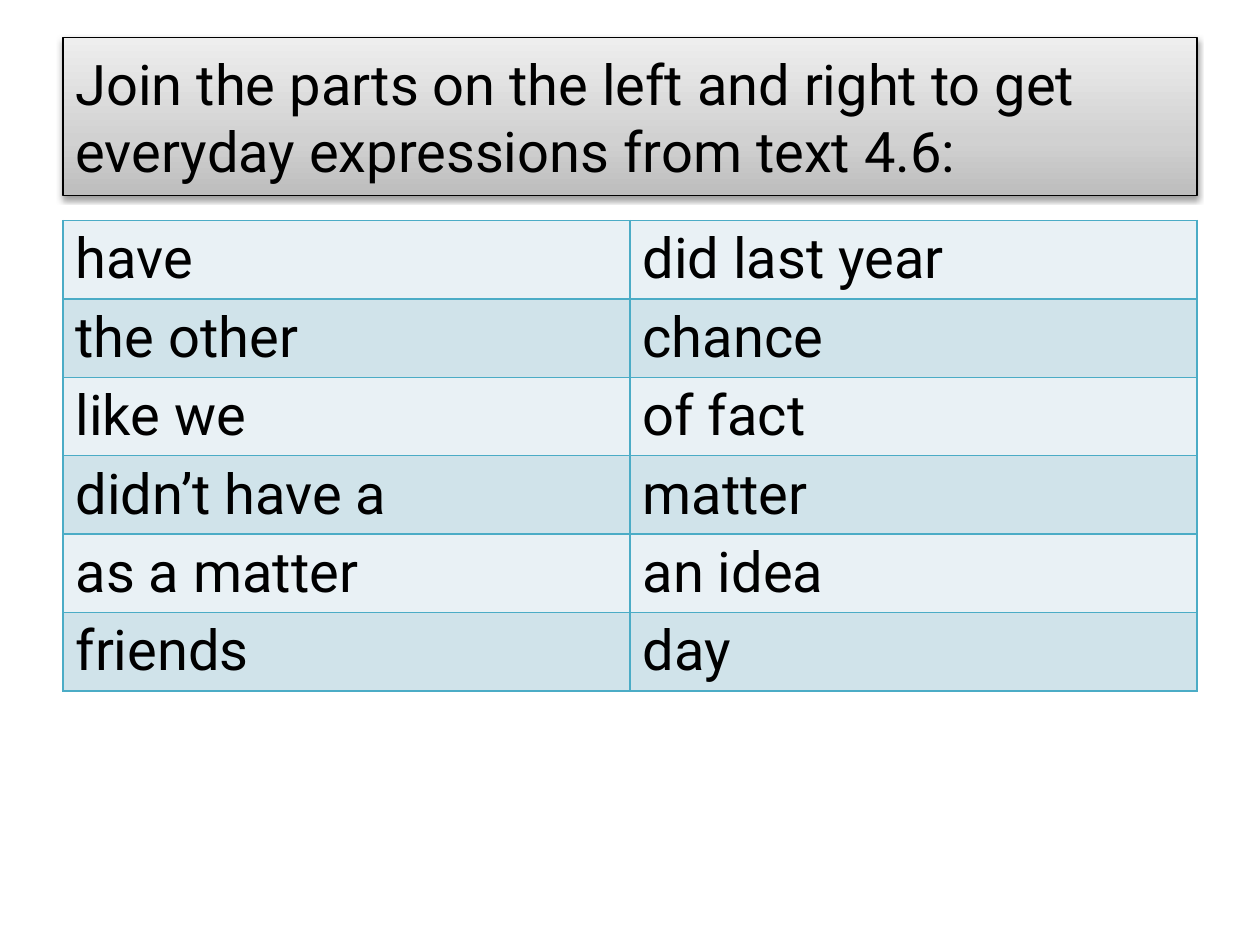
import copy

import pptx
import pptx.dml.color
import pptx.enum.text
import pptx.oxml
import pptx.oxml.ns
import pptx.util
from pptx.dml.color import RGBColor
from pptx.util import Inches, Pt

BLACK = RGBColor(0x00, 0x00, 0x00)
TITLE_STOPS = [
    (0, RGBColor(0xBD, 0xBD, 0xBD)),
    (0.35, RGBColor(0xD1, 0xD1, 0xD1)),
    (1, RGBColor(0xEE, 0xEE, 0xEE)),
]
BORDER = RGBColor(0x4B, 0xAC, 0xC6)
BANDS = [RGBColor(0xE9, 0xF1, 0xF5), RGBColor(0xD0, 0xE3, 0xEA)]

LEFT, WIDTH = 0.5, 9
ROW_HEIGHT = 0.62
EXPRESSIONS = [
    ("have", "did last year"),
    ("the other", "chance"),
    ("like we", "of fact"),
    ("didn’t have a", "matter"),
    ("as a matter", "an idea"),
    ("friends", "day"),
]


def write_text(text_frame, text, font="Roboto", size=32, color=BLACK,
               align=pptx.enum.text.PP_ALIGN.LEFT):
    paragraph = text_frame.paragraphs[0]
    paragraph.alignment = align
    run = paragraph.add_run()
    run.text = text
    run.font.name = font
    run.font.size = Pt(size)
    run.font.color.rgb = color


def drawing_xml(xml):
    """Parse one element whose tag has no attributes, in the a: namespace."""
    return pptx.oxml.parse_xml(xml.replace(">", f" {pptx.oxml.ns.nsdecls('a')}>", 1))


def add_shadow(shape):
    shape._element.spPr.append(drawing_xml(
        f'<a:effectLst><a:outerShdw blurRad="{Pt(3.1)}" dist="{Pt(1.6)}" '
        'dir="5400000" rotWithShape="0"><a:srgbClr val="000000">'
        '<a:alpha val="38000"/></a:srgbClr></a:outerShdw></a:effectLst>'))


def set_borders(cell, color, width):
    properties = cell._tc.get_or_add_tcPr()
    for index, side in enumerate(("lnL", "lnR", "lnT", "lnB")):
        line = drawing_xml(
            f'<a:{side}><a:solidFill><a:srgbClr val="{color}"/></a:solidFill></a:{side}>')
        line.set("w", str(Pt(width)))
        properties.insert(index, line)


class ExerciseSlide:
    def __init__(self, presentation):
        self.slide = presentation.slides.add_slide(presentation.slide_layouts[5])

    def title(self, text, top, height):
        title = self.slide.shapes.title
        title.left, title.top = Inches(LEFT), Inches(top)
        title.width, title.height = Inches(WIDTH), Inches(height)
        title.fill.gradient()
        title.fill.gradient_angle = 90
        stop_list = title._element.spPr.find(".//" + pptx.oxml.ns.qn("a:gsLst"))
        stop_list.insert(1, copy.deepcopy(stop_list[0]))
        for stop, (position, color) in zip(title.fill.gradient_stops, TITLE_STOPS):
            stop.position = position
            stop.color.rgb = color
        title.line.color.rgb = BLACK
        title.line.width = Pt(0.75)
        add_shadow(title)
        frame = title.text_frame
        frame.word_wrap = True
        frame.auto_size = pptx.enum.text.MSO_AUTO_SIZE.NONE
        frame.vertical_anchor = pptx.enum.text.MSO_ANCHOR.MIDDLE
        write_text(frame, text)

    def table(self, rows, top):
        table = self.slide.shapes.add_table(
            len(rows), len(rows[0]), Inches(LEFT), Inches(top),
            Inches(WIDTH), Inches(ROW_HEIGHT * len(rows))).table
        table.first_row = False
        table.horz_banding = False
        for row_index, row in enumerate(rows):
            for column_index, text in enumerate(row):
                cell = table.cell(row_index, column_index)
                cell.fill.solid()
                cell.fill.fore_color.rgb = BANDS[row_index % 2]
                set_borders(cell, BORDER, 1)
                write_text(cell.text_frame, text)


def main():
    presentation = pptx.Presentation()
    presentation.slide_width = Inches(10)
    presentation.slide_height = Inches(7.5)
    exercise = ExerciseSlide(presentation)
    exercise.title("Join the parts on the left and right to get everyday "
                   "expressions from text 4.6:", top=0.3, height=1.25)
    exercise.table(EXPRESSIONS, top=1.75)
    presentation.save("out.pptx")


if __name__ == "__main__":
    main()
